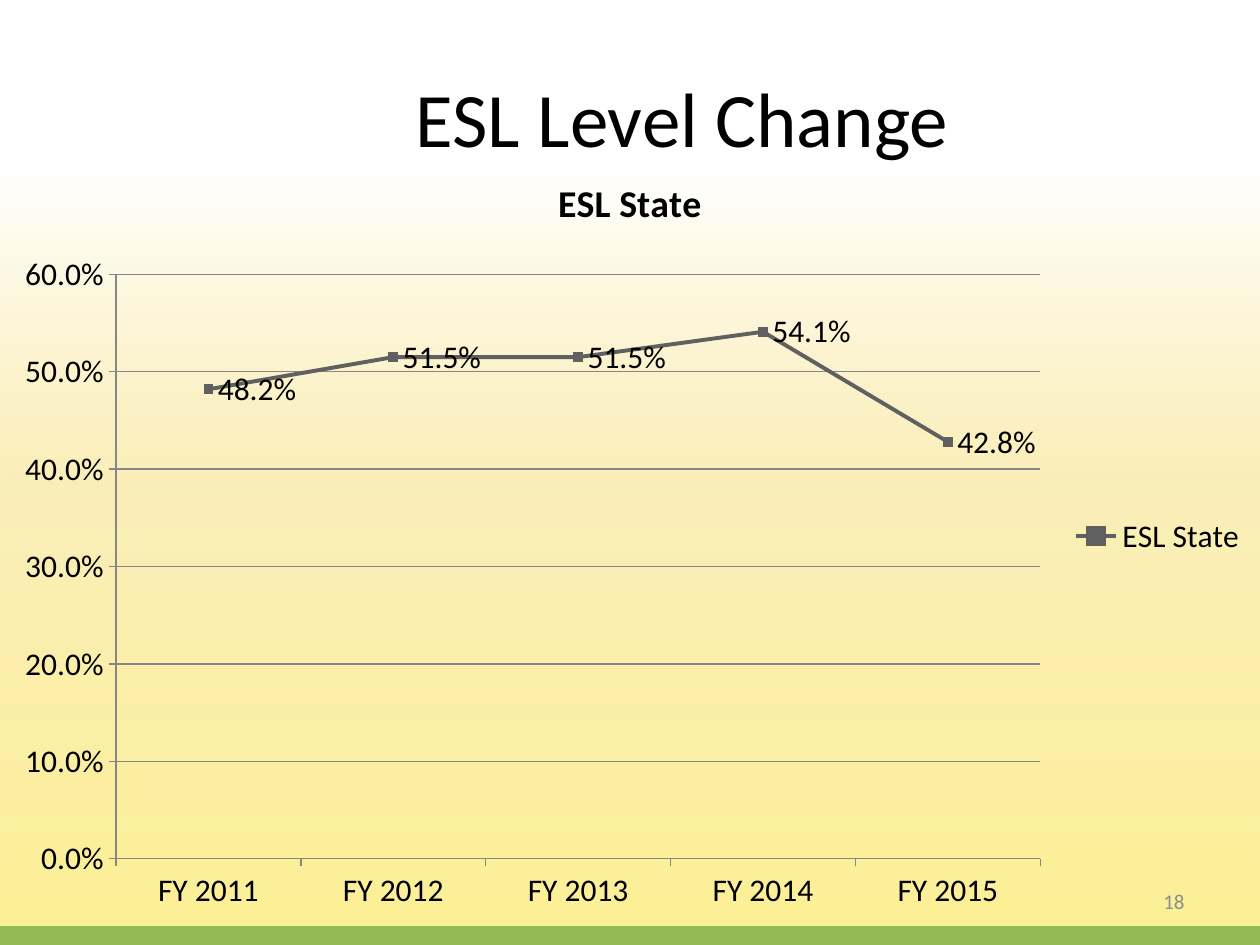
from lxml import etree
from pptx import Presentation
from pptx.chart.data import CategoryChartData
from pptx.dml.color import RGBColor
from pptx.enum.chart import XL_CHART_TYPE as ChartType, XL_LABEL_POSITION as LabelPosition
from pptx.enum.chart import XL_LEGEND_POSITION as LegendPosition, XL_MARKER_STYLE as MarkerStyle
from pptx.enum.chart import XL_TICK_MARK as TickMark
from pptx.enum.shapes import MSO_SHAPE as Shape
from pptx.enum.text import MSO_ANCHOR as Anchor, PP_ALIGN as Align
from pptx.oxml.ns import qn
from pptx.util import Inches, Pt

FONT = "Calibri"
SERIES_COLOR = "606060"
AXIS_COLOR = "868686"


def color(hex_string):
    return RGBColor.from_string(hex_string)


def add_text(slide, text, left, top, width, height, size, font_color, align):
    box = slide.shapes.add_textbox(Inches(left), Inches(top), Inches(width), Inches(height))
    frame = box.text_frame
    frame.word_wrap = True
    frame.vertical_anchor = Anchor.MIDDLE
    frame.text = text
    paragraph = frame.paragraphs[0]
    paragraph.alignment = align
    font = paragraph.runs[0].font
    font.name, font.size, font.color.rgb = FONT, Pt(size), color(font_color)


presentation = Presentation()
presentation.slide_width = Inches(10)
presentation.slide_height = Inches(7.5)
slide = presentation.slides.add_slide(presentation.slide_layouts[6])
slide.background.fill.solid()
slide.background.fill.fore_color.rgb = color("FFFFFF")

# Yellow gradient backdrop, fading to white towards the top
backdrop = slide.shapes.add_shape(Shape.RECTANGLE, 0, 0, Inches(10), Inches(7.5))
backdrop.shadow.inherit = False
backdrop.line.fill.background()
backdrop.fill.gradient()
gradient = backdrop.fill._xPr.find(qn("a:gradFill"))
stops = gradient.find(qn("a:gsLst"))
for stop in list(stops):
    stops.remove(stop)
for position, stop_color, opacity in [(0, "FCEF8E", 94), (49, "FAEAA8", 80), (82, "FFFFFF", 100)]:
    stop = etree.SubElement(stops, qn("a:gs"), pos=str(position * 1000))
    rgb = etree.SubElement(stop, qn("a:srgbClr"), val=stop_color)
    if opacity < 100:
        etree.SubElement(rgb, qn("a:alpha"), val=str(opacity * 1000))
gradient.find(qn("a:lin")).set("ang", str(270 * 60000))

# Green footer band
band = slide.shapes.add_shape(Shape.RECTANGLE, 0, Inches(7.35), Inches(10), Inches(0.15))
band.shadow.inherit = False
band.fill.solid()
band.fill.fore_color.rgb = color("94BA56")
band.line.fill.background()

# Title and slide number
add_text(slide, "ESL Level Change", 1.33, 0.3, 8.17, 1.25, 44, "000000", Align.CENTER)
add_text(slide, "18", 7.17, 6.95, 2.33, 0.4, 12, "8C8C8C", Align.RIGHT)

# Line chart
chart_data = CategoryChartData(number_format="0.0%")
chart_data.categories = [f"FY {year}" for year in range(2011, 2016)]
chart_data.add_series("ESL State", [0.482, 0.515, 0.515, 0.541, 0.428])
chart = slide.shapes.add_chart(
    ChartType.LINE_MARKERS, 0, Inches(1.17), Inches(10), Inches(6.17), chart_data
).chart
chart.font.name = FONT
chart.font.size = Pt(18)
chart.font.color.rgb = color("000000")

chart.has_title = True
chart.chart_title.text_frame.text = "ESL State"
title_font = chart.chart_title.text_frame.paragraphs[0].runs[0].font
title_font.name, title_font.size, title_font.bold = FONT, Pt(21.6), True
title_font.color.rgb = color("000000")
chart.has_legend = True
chart.legend.position = LegendPosition.RIGHT
chart.legend.include_in_layout = False

# Axes
value_axis = chart.value_axis
value_axis.minimum_scale, value_axis.maximum_scale, value_axis.major_unit = 0, 0.6, 0.1
value_axis.tick_labels.number_format = "0.0%"
value_axis.tick_labels.number_format_is_linked = False
value_axis.has_major_gridlines = True
value_axis.major_gridlines.format.line.color.rgb = color(AXIS_COLOR)
value_axis.major_gridlines.format.line.width = Pt(0.75)
for axis in (chart.category_axis, value_axis):
    axis.major_tick_mark = TickMark.OUTSIDE
    axis.format.line.color.rgb = color(AXIS_COLOR)
    axis.format.line.width = Pt(0.75)

# Series line, markers and value labels
plot = chart.plots[0]
plot.vary_by_categories = False
series = plot.series[0]
series.smooth = False
series.format.line.color.rgb = color(SERIES_COLOR)
series.format.line.width = Pt(2.25)
series.marker.style = MarkerStyle.SQUARE
series.marker.size = 5
series.marker.format.fill.solid()
series.marker.format.fill.fore_color.rgb = color(SERIES_COLOR)
series.marker.format.line.color.rgb = color(SERIES_COLOR)
labels = series.data_labels
labels.show_value = True
labels.number_format = "0.0%"
labels.number_format_is_linked = False
labels.position = LabelPosition.RIGHT

presentation.save("out.pptx")
